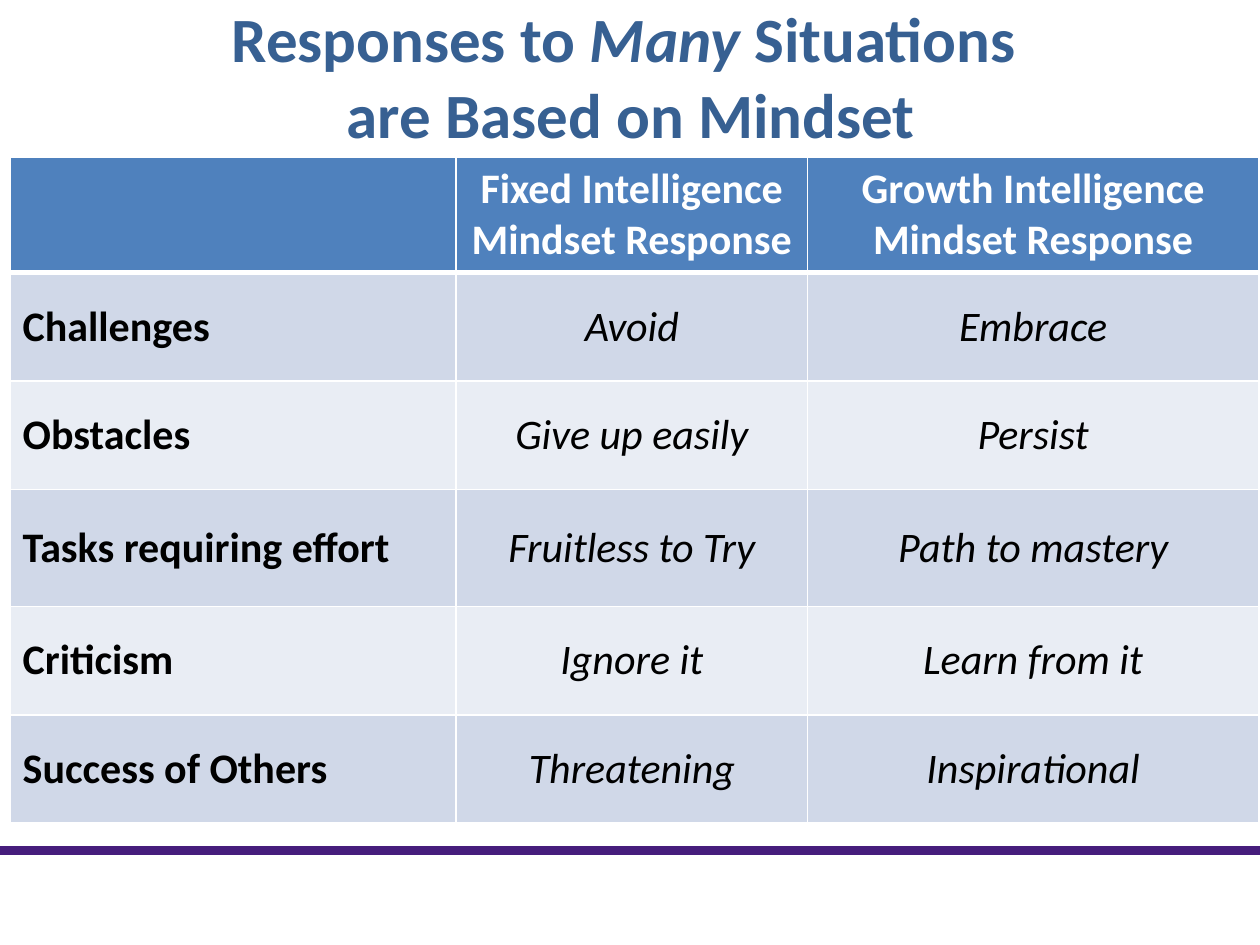
"""Build a slide comparing responses under fixed and growth mindsets."""
from dataclasses import dataclass

import pptx
import pptx.dml.color
import pptx.enum.shapes
import pptx.enum.text
import pptx.oxml
import pptx.oxml.ns
import pptx.util

Inches = pptx.util.Inches
Align = pptx.enum.text.PP_ALIGN
Anchor = pptx.enum.text.MSO_ANCHOR


@dataclass(frozen=True)
class Theme:
    font: str = "Calibri"
    title_size: int = 36
    table_size: int = 24
    title: str = "376092"
    header: str = "4F81BD"
    bands: tuple[str, str] = ("D0D8E8", "E9EDF4")
    text: str = "000000"
    white: str = "FFFFFF"
    rule: str = "461D7C"


@dataclass(frozen=True)
class Situation:
    name: str
    fixed: str
    growth: str
    height: float = 0.86


THEME = Theme()
HEADINGS = ("", "Fixed Intelligence Mindset Response", "Growth Intelligence Mindset Response")
HEADER_HEIGHT = 0.9
COLUMN_WIDTHS = (3.54, 2.79, 3.58)
SITUATIONS = (
    Situation("Challenges", "Avoid", "Embrace"),
    Situation("Obstacles", "Give up easily", "Persist"),
    Situation("Tasks requiring effort", "Fruitless to Try", "Path to mastery", 0.93),
    Situation("Criticism", "Ignore it", "Learn from it"),
    Situation("Success of Others", "Threatening", "Inspirational"),
)


def rgb(value: str) -> pptx.dml.color.RGBColor:
    return pptx.dml.color.RGBColor.from_string(value)


def add_text(para, text: str, *, size: int, color: str, bold: bool = False,
             italic: bool = False, align=Align.CENTER) -> None:
    para.alignment = align
    span = para.add_run()
    span.text = text
    span.font.name = THEME.font
    span.font.size = pptx.util.Pt(size)
    span.font.color.rgb = rgb(color)
    span.font.bold = bold
    span.font.italic = italic


def add_title(page) -> None:
    box = page.shapes.title
    box.left, box.top, box.width, box.height = map(Inches, (0, 0.33, 10.01, 1.08))
    frame = box.text_frame
    frame.word_wrap = True
    frame.auto_size = pptx.enum.text.MSO_AUTO_SIZE.NONE
    frame.vertical_anchor = Anchor.MIDDLE
    frame.margin_bottom = Inches(0.59)
    para = frame.paragraphs[0]
    look = dict(size=THEME.title_size, color=THEME.title, bold=True)
    add_text(para, "Responses to ", **look)
    add_text(para, "Many", italic=True, **look)
    add_text(para, " Situations ", **look)
    para.add_line_break()
    add_text(para, "are Based on Mindset", **look)


def add_border(cell, side: str, points: float) -> None:
    namespace = pptx.oxml.ns.nsdecls("a")
    cell._tc.get_or_add_tcPr().append(pptx.oxml.parse_xml(
        f'<a:ln{side} {namespace} w="{pptx.util.Pt(points)}"><a:solidFill>'
        f'<a:srgbClr val="{THEME.white}"/></a:solidFill></a:ln{side}>'))


def format_cell(cell, fill: str, anchor, bottom: float = 1) -> None:
    for side, points in (("L", 1), ("R", 1), ("T", 1), ("B", bottom)):
        add_border(cell, side, points)
    cell.fill.solid()
    cell.fill.fore_color.rgb = rgb(fill)
    cell.vertical_anchor = anchor


def add_responses(page) -> None:
    heights = (HEADER_HEIGHT, *(situation.height for situation in SITUATIONS))
    table = page.shapes.add_table(
        len(heights), len(COLUMN_WIDTHS), Inches(0.08), Inches(1.25),
        Inches(sum(COLUMN_WIDTHS)), Inches(sum(heights))).table
    for column, width in zip(table.columns, COLUMN_WIDTHS):
        column.width = Inches(width)
    for row, height in zip(table.rows, heights):
        row.height = Inches(height)
    for cell, heading in zip(table.rows[0].cells, HEADINGS):
        format_cell(cell, THEME.header, Anchor.TOP, bottom=3)
        if heading:
            add_text(cell.text_frame.paragraphs[0], heading,
                     size=THEME.table_size, color=THEME.white, bold=True)
    for index, situation in enumerate(SITUATIONS):
        texts = (situation.name, situation.fixed, situation.growth)
        for column, text in enumerate(texts):
            cell = table.cell(index + 1, column)
            format_cell(cell, THEME.bands[index % 2], Anchor.MIDDLE)
            label = column == 0
            add_text(cell.text_frame.paragraphs[0], text, size=THEME.table_size,
                     color=THEME.text, bold=label, italic=not label,
                     align=Align.LEFT if label else Align.CENTER)


def add_rule(page) -> None:
    rule = page.shapes.add_connector(
        pptx.enum.shapes.MSO_CONNECTOR.STRAIGHT,
        Inches(0), Inches(6.75), Inches(10), Inches(6.75))
    rule.line.color.rgb = rgb(THEME.rule)
    rule.line.width = pptx.util.Pt(5)
    rule._element.spPr.append(pptx.oxml.parse_xml(
        f'<a:effectLst {pptx.oxml.ns.nsdecls("a")}/>'))


def main() -> None:
    deck = pptx.Presentation()
    deck.slide_width, deck.slide_height = Inches(10), Inches(7.5)
    page = deck.slides.add_slide(deck.slide_layouts.get_by_name("Title Only"))
    add_title(page)
    add_rule(page)
    add_responses(page)
    deck.save("out.pptx")


if __name__ == "__main__":
    main()
